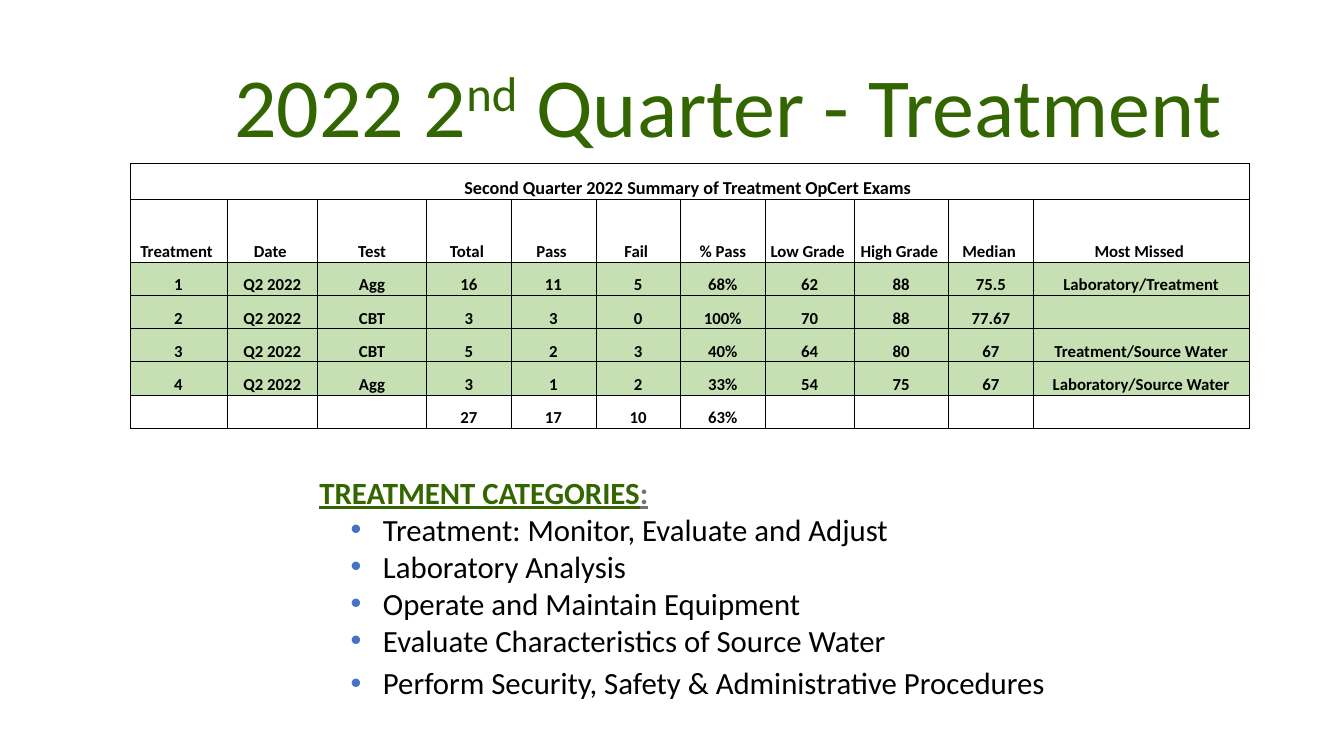
from lxml import etree
from pptx import Presentation
from pptx.dml.color import RGBColor
from pptx.enum.text import MSO_ANCHOR, PP_ALIGN
from pptx.oxml.ns import qn
from pptx.util import Inches, Pt

CENTER = PP_ALIGN.CENTER
BOTTOM = MSO_ANCHOR.BOTTOM
TOP = MSO_ANCHOR.TOP

GREEN = RGBColor(0x33, 0x66, 0x00)
GRAY = RGBColor(0x76, 0x71, 0x71)
BLACK = RGBColor(0, 0, 0)
BLUE = RGBColor(0x44, 0x72, 0xC4)
PALE = RGBColor(0xC6, 0xE0, 0xB4)

COLS = [0.96, 0.9, 1.08, 0.84, 0.84, 0.84, 0.84, 0.88, 0.94, 0.84, 2.14]
HEIGHTS = [0.36, 0.62] + [0.33] * 5
CAPTION = "Second Quarter 2022 Summary of Treatment OpCert Exams "
HEADS = ["Treatment ", "Date ", "Test", "Total ", "Pass ", "Fail ", "% Pass",
         "Low Grade ", "High Grade ", "Median ", "Most Missed "]
EXAMS = [
    ["1", "Q2 2022", "Agg", "16", "11", "5", "68%", "62", "88", "75.5",
     "Laboratory/Treatment"],
    ["2", "Q2 2022", "CBT", "3", "3", "0", "100%", "70", "88", "77.67", ""],
    ["3", "Q2 2022", "CBT", "5", "2", "3", "40%", "64", "80", "67",
     "Treatment/Source Water"],
    ["4", "Q2 2022", "Agg", "3", "1", "2", "33%", "54", "75", "67",
     "Laboratory/Source Water"],
]
TOTALS = [""] * 3 + ["27", "17", "10", "63%"] + [""] * 4
TOPICS = [
    "Treatment: Monitor, Evaluate and Adjust",
    "Laboratory Analysis",
    "Operate and Maintain Equipment",
    "Evaluate Characteristics of Source Water",
    "Perform Security, Safety & Administrative Procedures",
]


class Deck:
    face = "Calibri"

    def __init__(self):
        self.prs = Presentation()
        self.prs.slide_width = Inches(13.33)
        self.prs.slide_height = Inches(7.5)
        self.slide = self.prs.slides.add_slide(self.prs.slide_layouts[6])

    def style(self, para, size, color, bold=False):
        font = para.font
        font.name, font.size, font.bold = self.face, Pt(size), bold
        font.color.rgb = color

    def frame(self, x, y, w, h, anchor=TOP):
        box = self.slide.shapes.add_textbox(
            Inches(x), Inches(y), Inches(w), Inches(h))
        box.text_frame.word_wrap = True
        box.text_frame.vertical_anchor = anchor
        return box.text_frame

    def title(self, parts, *place):
        para = self.frame(*place, anchor=BOTTOM).paragraphs[0]
        para.alignment = CENTER
        para.line_spacing = 0.9
        self.style(para, 60, GREEN)
        for text, raised in parts:
            run = para.add_run()
            run.text = text
            if raised:
                run.font._element.set("baseline", "30000")

    def topics(self, head, items, *place):
        frame = self.frame(*place)
        para = frame.paragraphs[0]
        self.style(para, 22, GREEN, True)
        para.font.underline = True
        for text, color in head:
            run = para.add_run()
            run.text = text
            run.font.color.rgb = color
        for item in items:
            para = frame.add_paragraph()
            para.text = item
            self.bullet(para)
            self.style(para, 22, BLACK)
        para.space_before = Pt(4)

    def bullet(self, para):
        props = para._p.get_or_add_pPr()
        props.set("marL", str(Inches(0.63)))
        props.set("indent", str(Inches(-0.32)))
        tint = etree.SubElement(props, qn("a:buClr"))
        etree.SubElement(tint, qn("a:srgbClr"), val=str(BLUE))
        etree.SubElement(props, qn("a:buFont"), typeface="Arial")
        etree.SubElement(props, qn("a:buChar"), char="•")

    def border(self, cell):
        props = cell._tc.get_or_add_tcPr()
        for side in ("lnL", "lnR", "lnT", "lnB"):
            line = etree.SubElement(props, qn("a:" + side), w=str(Pt(0.5)))
            fill = etree.SubElement(line, qn("a:solidFill"))
            etree.SubElement(fill, qn("a:srgbClr"), val=str(BLACK))

    def cell(self, cell, text, size, fill):
        self.border(cell)
        if fill:
            cell.fill.solid()
            cell.fill.fore_color.rgb = fill
        else:
            cell.fill.background()
        cell.margin_left = cell.margin_right = cell.margin_top = Inches(0.01)
        cell.margin_bottom = 0
        cell.vertical_anchor = BOTTOM
        para = cell.text_frame.paragraphs[0]
        para.alignment = CENTER
        self.style(para, size, BLACK, True)
        if text:
            para.add_run().text = text

    def table(self, rows, x, y):
        table = self.slide.shapes.add_table(
            len(rows), len(COLS), Inches(x), Inches(y),
            Inches(sum(COLS)), Inches(sum(HEIGHTS))).table
        table.first_row = table.horz_banding = False
        for col, width in zip(table.columns, COLS):
            col.width = Inches(width)
        for row, height in zip(table.rows, HEIGHTS):
            row.height = Inches(height)
        table.cell(0, 0).merge(table.cell(0, len(COLS) - 1))
        for r, row in enumerate(rows):
            fill = PALE if row in EXAMS else None
            for c, text in enumerate(row):
                self.cell(table.cell(r, c), text, 12 if r else 13, fill)


def main():
    deck = Deck()

    # Title
    deck.title([("2022 2", False), ("nd", True),
                (" Quarter - Treatment", False)], 1.36, 0.49, 11.73, 1.1)

    # Categories
    deck.topics([("TREATMENT CATEGORIES", GREEN), (":", GRAY)], TOPICS,
                3.07, 4.65, 7.88, 2.75)

    # Exam results
    caption = [CAPTION] + [""] * (len(COLS) - 1)
    deck.table([caption, HEADS, *EXAMS, TOTALS], 1.29, 1.62)

    deck.prs.save("out.pptx")


if __name__ == "__main__":
    main()
